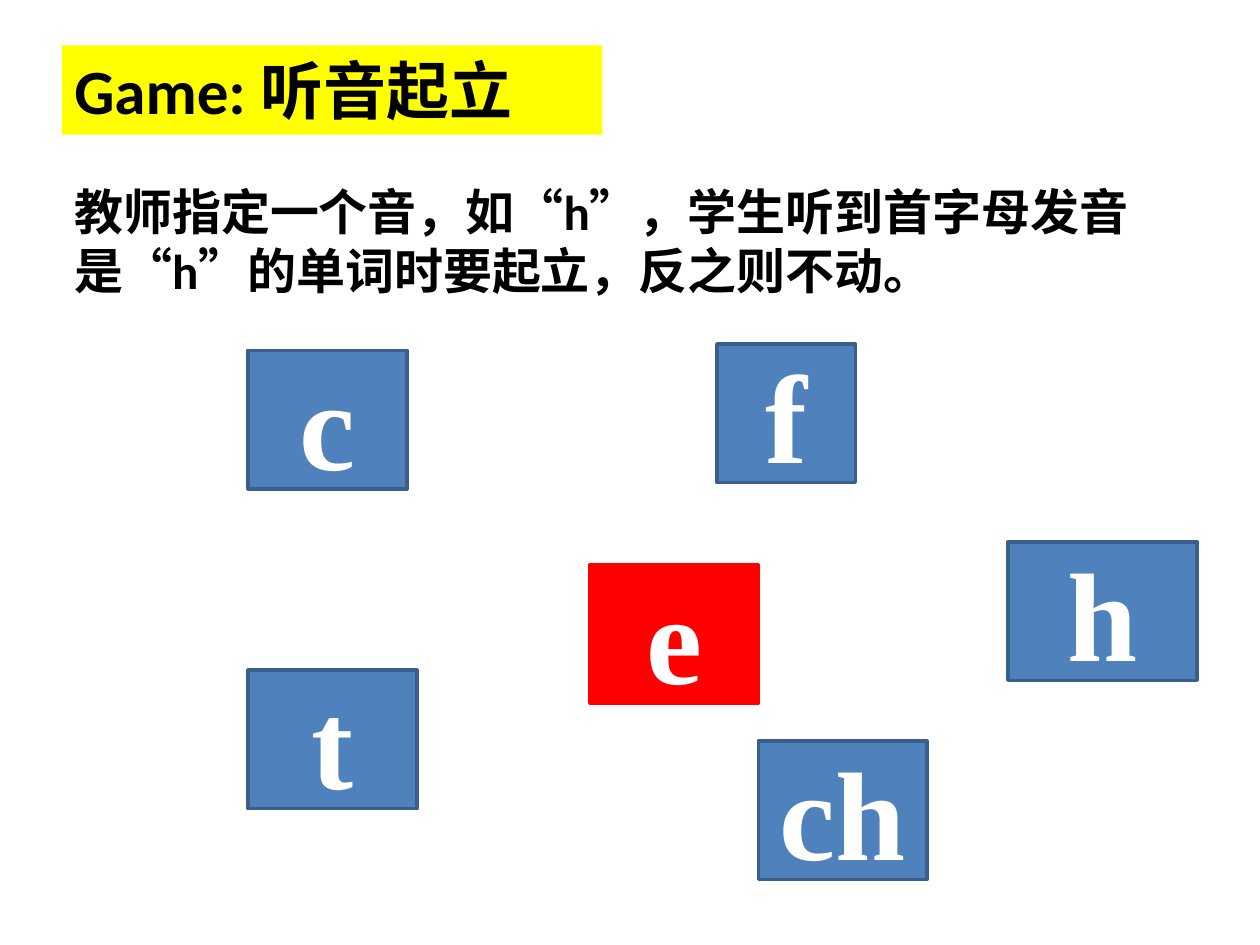
import dataclasses

import pptx
import pptx.dml.color
import pptx.enum.lang
import pptx.enum.shapes
import pptx.enum.text
import pptx.oxml.xmlchemy
import pptx.util
from lxml import etree

Pt = pptx.util.Pt
ALIGN = pptx.enum.text.PP_ALIGN
ANCHOR = pptx.enum.text.MSO_ANCHOR
BLUE, BLUE_EDGE, RED = "4F81BD", "3A5F8C", "FF0000"
YELLOW, BLACK, WHITE = "FFFF00", "000000", "FFFFFF"
CARD_HEIGHT = 79.2


@dataclasses.dataclass
class Card:
    letters: str
    left: float
    top: float
    width: float
    fill: str = BLUE
    edge: str = BLUE_EDGE


CARDS = [
    Card("h", 576, 309.6, 108),
    Card("e", 337, 322.6, 96.5, RED, RED),
    Card("c", 141.8, 200.2, 90.7),
    Card("ch", 433.4, 423.4, 96.5),
    Card("f", 409.7, 196.6, 79.2),
    Card("t", 141.8, 383, 96.5),
]


def rgb(value: str) -> pptx.dml.color.RGBColor:
    return pptx.dml.color.RGBColor.from_string(value)


def write(sp, text: str, size: float, font: str, color: str, align, anchor) -> None:
    """Put one bold paragraph into a shape."""
    tf = sp.text_frame
    tf.word_wrap = True
    tf.auto_size = pptx.enum.text.MSO_AUTO_SIZE.NONE
    tf.vertical_anchor = anchor
    p = tf.paragraphs[0]
    p.text = text
    p.alignment = align
    p.space_before = Pt(0)
    p.font.size = Pt(size)
    p.font.name = font
    p.font.bold = True
    p.font.color.rgb = rgb(color)
    p.font.language_id = pptx.enum.lang.MSO_LANGUAGE_ID.SIMPLIFIED_CHINESE


def place(sp, left: float, top: float, width: float, height: float) -> None:
    sp.left, sp.top, sp.width, sp.height = map(Pt, (left, top, width, height))


def remove_bullet(p) -> None:
    pPr = p._p.get_or_add_pPr()
    pPr.set("marL", "0")
    pPr.set("indent", "0")
    bullet = etree.Element(pptx.oxml.ns.qn("a:buNone"))
    pPr.find(pptx.oxml.ns.qn("a:defRPr")).addprevious(bullet)


def draw_card(slide, card: Card) -> None:
    sp = slide.shapes.add_shape(
        pptx.enum.shapes.MSO_SHAPE.RECTANGLE,
        Pt(card.left), Pt(card.top), Pt(card.width), Pt(CARD_HEIGHT))
    sp.shadow.inherit = False
    sp.fill.solid()
    sp.fill.fore_color.rgb = rgb(card.fill)
    sp.line.color.rgb = rgb(card.edge)
    sp.line.width = Pt(2)
    write(sp, card.letters, 72, "Times New Roman", WHITE, ALIGN.CENTER, ANCHOR.MIDDLE)


def main() -> None:
    prs = pptx.Presentation()
    prs.slide_width, prs.slide_height = Pt(720), Pt(540)
    slide = prs.slides.add_slide(prs.slide_layouts[1])

    # Title on a yellow band
    title = slide.shapes.title
    place(title, 35.3, 25.9, 308.9, 51.1)
    title.fill.solid()
    title.fill.fore_color.rgb = rgb(YELLOW)
    write(title, "Game: 听音起立", 36, "Calibri", BLACK, ALIGN.LEFT, ANCHOR.TOP)

    # Rules of the game
    rules = slide.placeholders[1]
    place(rules, 35.3, 100.1, 630.7, 74.9)
    write(rules, "教师指定一个音，如“h”，学生听到首字母发音是“h”的单词时要起立，反之则不动。",
          28, "Calibri", BLACK, ALIGN.LEFT, ANCHOR.TOP)
    remove_bullet(rules.text_frame.paragraphs[0])

    # Letter cards
    for card in CARDS:
        draw_card(slide, card)

    prs.save("out.pptx")


if __name__ == "__main__":
    main()
